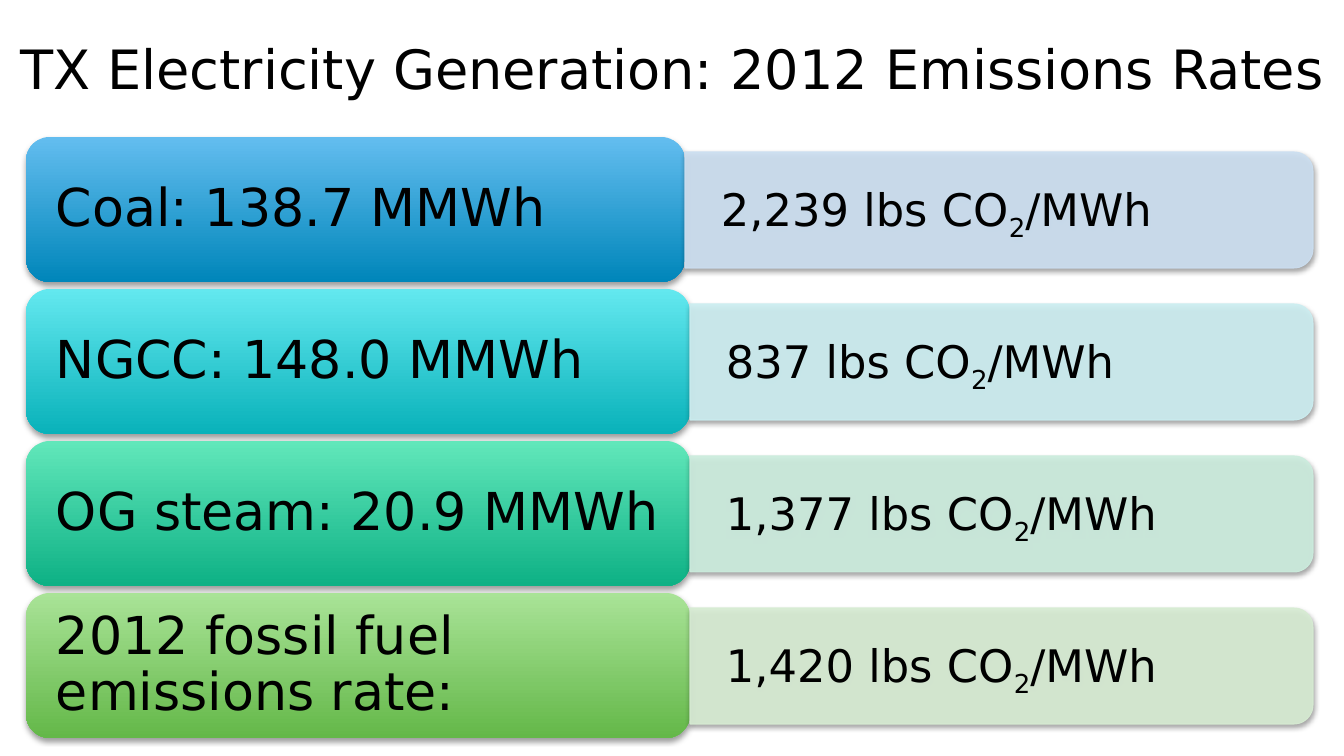
from math import cos, pi, sin

from lxml import etree
from pptx import Presentation
from pptx.dml.color import RGBColor
from pptx.enum.shapes import MSO_SHAPE
from pptx.enum.text import MSO_ANCHOR, PP_ALIGN
from pptx.oxml.ns import qn
from pptx.util import Pt

EMU_PER_PX = 914400 / 100.8
FONT = "DejaVu Sans"
BLACK = RGBColor(0x00, 0x00, 0x00)

# Source, rate, source bar width, gradient top, gradient bottom, rate bar colour
ROWS = [
    ("Coal: 138.7 MMWh", "2,239", 659,
     RGBColor(0x63, 0xBD, 0xEF), RGBColor(0x00, 0x86, 0xBA), RGBColor(0xCC, 0xDF, 0xF1)),
    ("NGCC: 148.0 MMWh", "837", 664,
     RGBColor(0x63, 0xE8, 0xEF), RGBColor(0x09, 0xB2, 0xBA), RGBColor(0xCC, 0xEE, 0xF1)),
    ("OG steam: 20.9 MMWh", "1,377", 664,
     RGBColor(0x61, 0xE7, 0xBA), RGBColor(0x0E, 0xB1, 0x85), RGBColor(0xCC, 0xED, 0xDE)),
    ("2012 fossil fuel emissions rate:", "1,420", 664,
     RGBColor(0xA9, 0xE3, 0x97), RGBColor(0x64, 0xB8, 0x49), RGBColor(0xD7, 0xEC, 0xD3)),
]
LEFT, RIGHT, FIRST_TOP, PITCH = 26, 1313, 137, 152
SOURCE_HEIGHT, SOURCE_RADIUS = 145, 24
RATE_OFFSET, RATE_HEIGHT, RATE_RADIUS = 15, 116, 19


def px(length):
    return round(length * EMU_PER_PX)


def write(shape, text, size, insets=(0, 0, 0, 0), align=PP_ALIGN.LEFT, spacing=0.9):
    """Fill a shape with one paragraph; text between underscores is subscript."""
    frame = shape.text_frame
    frame.word_wrap = True
    frame.vertical_anchor = MSO_ANCHOR.MIDDLE
    frame.margin_left, frame.margin_top, frame.margin_right, frame.margin_bottom = map(px, insets)
    para = frame.paragraphs[0]
    para.alignment = align
    para.line_spacing = spacing
    for index, part in enumerate(text.split("_")):
        span = para.add_run()
        span.text = part
        span.font.name = FONT
        span.font.size = Pt(size)
        span.font.color.rgb = BLACK
        if index % 2:
            span.font._element.set("baseline", "-25000")


deck = Presentation()
deck.slide_width, deck.slide_height = px(1344), px(756)
page = deck.slides.add_slide(deck.slide_layouts[5])

# Title
title = page.shapes.title
title.left, title.top, title.width, title.height = px(0), px(-1), px(1344), px(138)
write(title, "TX Electricity Generation: 2012 Emissions Rates", 38.7,
      align=PP_ALIGN.CENTER, spacing=1.0)

for row, (source, rate, width, light, dark, pale) in enumerate(ROWS):
    top = FIRST_TOP + row * PITCH

    # Source bar
    source_bar = page.shapes.add_shape(
        MSO_SHAPE.ROUNDED_RECTANGLE, px(LEFT), px(top), px(width), px(SOURCE_HEIGHT))
    source_bar.adjustments[0] = SOURCE_RADIUS / SOURCE_HEIGHT
    source_bar.fill.gradient()
    source_bar.fill.gradient_angle = 270
    for stop, position, colour in zip(source_bar.fill.gradient_stops, (0, 1), (light, dark)):
        stop.position = position
        stop.color.rgb = colour
    source_bar.line.fill.background()
    write(source_bar, source, 37.3, insets=(23, 15, 23, 15))

    # Rate bar, rounded on the right only
    rate_left, rate_top = LEFT + width, top + RATE_OFFSET
    rate_bottom = rate_top + RATE_HEIGHT
    arc = [(RATE_RADIUS * sin(step * pi / 24), RATE_RADIUS * cos(step * pi / 24))
           for step in range(13)]
    centre = RIGHT - RATE_RADIUS
    outline = [(centre + x, rate_top + RATE_RADIUS - y) for x, y in arc]
    outline += [(centre + x, rate_bottom - RATE_RADIUS + y) for x, y in reversed(arc)]
    outline.append((rate_left, rate_bottom))
    builder = page.shapes.build_freeform(px(rate_left), px(rate_top))
    builder.add_line_segments([(px(x), px(y)) for x, y in outline], close=True)
    rate_bar = builder.convert_to_shape()
    rate_bar.fill.solid()
    rate_bar.fill.fore_color.rgb = pale
    rate_bar.line.color.rgb = pale
    rate_bar.line.width = Pt(0.75)
    for colour in rate_bar._element.spPr.iter(qn("a:srgbClr")):
        etree.SubElement(colour, qn("a:alpha"), val="90000")
    write(rate_bar, f"{rate} lbs CO_2_/MWh", 32, insets=(36, 24, 42, 24))

    # Soft shadow below both bars
    for bar in (source_bar, rate_bar):
        bar.shadow.inherit = False
        effects = bar._element.spPr.find(qn("a:effectLst"))
        shadow = etree.SubElement(effects, qn("a:outerShdw"), blurRad=str(Pt(4)),
                                  dist=str(Pt(2)), dir="5400000", rotWithShape="0")
        tint = etree.SubElement(shadow, qn("a:srgbClr"), val=str(BLACK))
        etree.SubElement(tint, qn("a:alpha"), val="38000")

deck.save("out.pptx")
